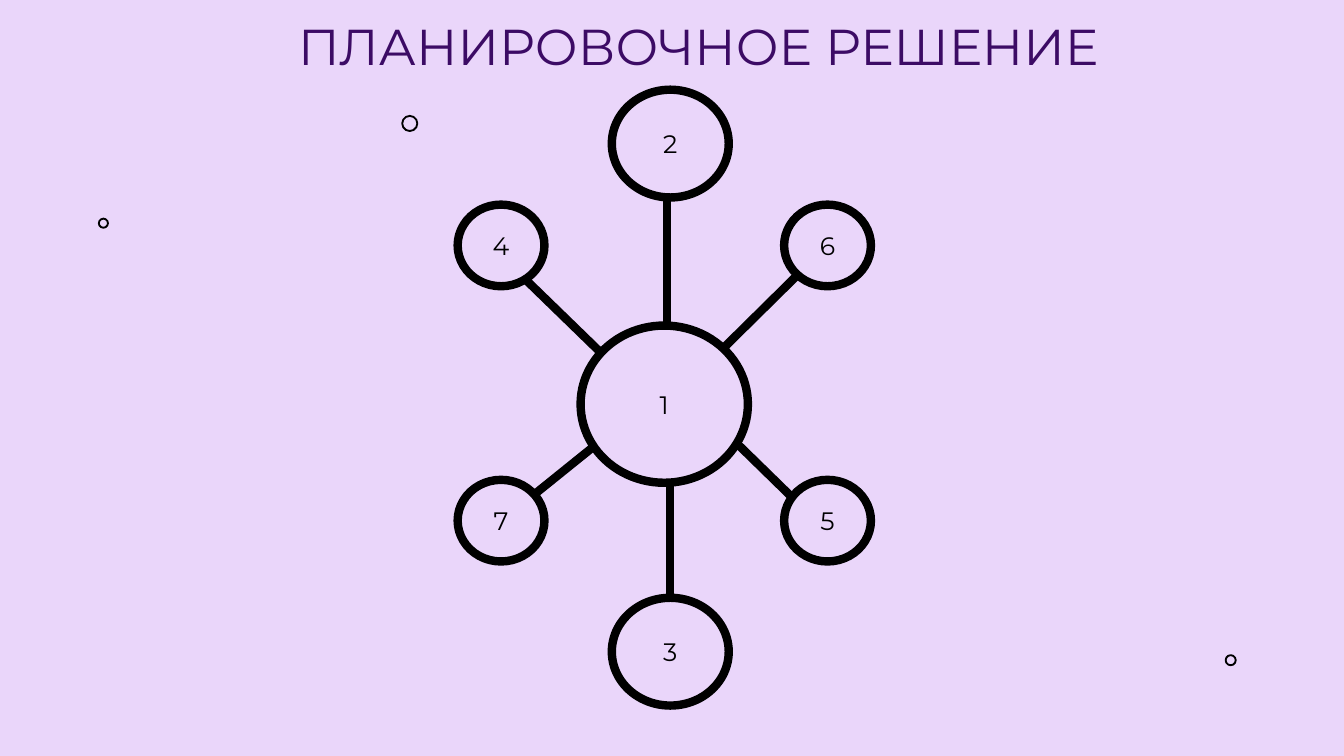
from lxml import etree
from pptx import Presentation
from pptx.dml.color import RGBColor
from pptx.enum.shapes import MSO_CONNECTOR as Conn, MSO_SHAPE as Shape
from pptx.enum.text import MSO_ANCHOR as Anchor, MSO_AUTO_SIZE as Fit, PP_ALIGN as Align
from pptx.oxml.ns import qn
from pptx.util import Pt

COLORS = {"back": "EAD6FA", "ink": "000000", "title": "3C0B65"}
FONT = "Montserrat"
STROKE = 6

HUB, BIG, SMALL = (119.5, 112.3), (83.5, 77), (62, 58.3)
MID, LEFT, RIGHT = 151.9, 31, 264.2
UPPER, LOWER = 111.2, 307.8

# label, centre x, centre y, size; all relative to the diagram box
NODES = [
    ("1", 147.6, 224.6, HUB),
    ("2", MID, 38.5, BIG),
    ("4", LEFT, UPPER, SMALL),
    ("6", RIGHT, UPPER, SMALL),
    ("7", LEFT, LOWER, SMALL),
    ("5", RIGHT, LOWER, SMALL),
    ("3", MID, 401.4, BIG),
]
# start and end of each spoke, relative to the diagram box
SPOKES = [
    (MID, 216, MID, 399.6),
    (19.4, 107.3, 145.4, 229.7),
    (149.7, 46.1, 149.7, 229.7),
    (242.6, 132.5, 190.1, 184.3),
    (130.3, 228.2, 52.5, 290.9),
    (132.5, 187.2, 258.5, 310.3),
]
# left, top, diameter
DOTS = [(287.3, 82.8, 10.8), (70.6, 156.2, 6.5), (875.5, 468, 7.2)]


def color(name):
    return RGBColor.from_string(COLORS[name])


def write(frame, text, size=18, ink="ink", align=Align.LEFT, anchor=Anchor.TOP):
    frame.word_wrap = True
    frame.vertical_anchor = anchor
    para = frame.paragraphs[0]
    para.alignment = align
    run = para.add_run()
    run.text = text
    run.font.name = FONT
    run.font.size = Pt(size)
    run.font.color.rgb = color(ink)


def add_ring(slide, left, top, width, height, stroke, fill=None):
    ring = slide.shapes.add_shape(Shape.OVAL, Pt(left), Pt(top), Pt(width), Pt(height))
    ring.shadow.inherit = False
    if fill:
        ring.fill.solid()
        ring.fill.fore_color.rgb = color(fill)
    else:
        ring.fill.background()
    ring.line.color.rgb = color("ink")
    ring.line.width = Pt(stroke)
    return ring


def add_spoke(slide, x1, y1, x2, y2):
    spoke = slide.shapes.add_connector(Conn.STRAIGHT, Pt(x1), Pt(y1), Pt(x2), Pt(y2))
    spoke.line.color.rgb = color("ink")
    spoke.line.width = Pt(STROKE)
    etree.SubElement(spoke._element.spPr, qn("a:effectLst"))


def add_title(slide, left, top, width, height):
    box = slide.shapes.add_textbox(Pt(left), Pt(top), Pt(width), Pt(height))
    write(box.text_frame, "ПЛАНИРОВОЧНОЕ РЕШЕНИЕ", size=36, ink="title")
    box.text_frame.auto_size = Fit.SHAPE_TO_FIT_TEXT


def add_diagram(slide, left, top):
    """Draw the spokes first, so that the rings cover their ends."""
    for x1, y1, x2, y2 in SPOKES:
        add_spoke(slide, left + x1, top + y1, left + x2, top + y2)
    for label, x, y, (width, height) in NODES:
        ring = add_ring(slide, left + x - width / 2, top + y - height / 2,
                        width, height, STROKE, "back")
        write(ring.text_frame, label, align=Align.CENTER, anchor=Anchor.MIDDLE)


def add_dots(slide):
    for left, top, size in DOTS:
        add_ring(slide, left, top, size, size, 1.32)


def main():
    deck = Presentation()
    deck.slide_width, deck.slide_height = Pt(960), Pt(540)
    slide = deck.slides.add_slide(deck.slide_layouts[6])
    slide.background.fill.solid()
    slide.background.fill.fore_color.rgb = color("back")
    add_title(slide, 205.9, 7.2, 621.4, 51.1)
    add_diagram(slide, 326.9, 64.1)
    add_dots(slide)
    deck.save("out.pptx")


if __name__ == "__main__":
    main()
